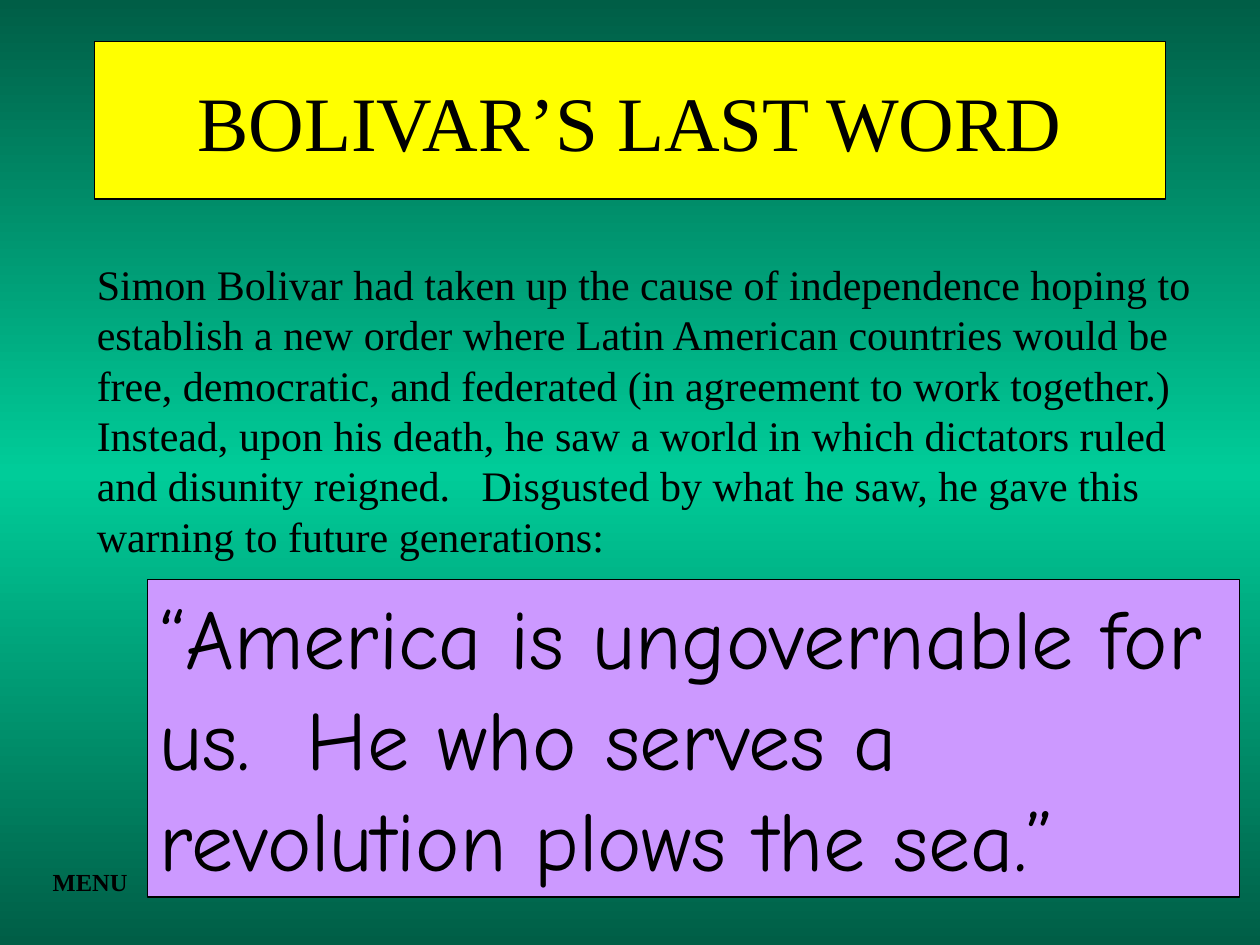
from copy import deepcopy
from dataclasses import dataclass

from pptx import Presentation
from pptx.dml.color import RGBColor
from pptx.enum import shapes, text
from pptx.util import Inches, Pt

SERIF = "Times New Roman"
INK = "000000"


@dataclass
class Box:
    left: float
    top: float
    width: float
    height: float
    fill: str = ""


def tint(code: str) -> RGBColor:
    return RGBColor.from_string(code)


def paint_back(slide, edge: str, core: str) -> None:
    fill = slide.background.fill
    fill.gradient()
    fill.gradient_angle = 90
    first = fill.gradient_stops[0]._gs
    first.addnext(deepcopy(first))
    for stop, place, code in zip(fill.gradient_stops, (0, 0.5, 1), (edge, core, edge)):
        stop.position = place
        stop.color.rgb = tint(code)


def draw_box(slide, box: Box):
    area = [Inches(n) for n in (box.left, box.top, box.width, box.height)]
    if not box.fill:
        return slide.shapes.add_textbox(*area)
    shape = slide.shapes.add_shape(shapes.MSO_SHAPE.RECTANGLE, *area)
    shape.shadow.inherit = False
    shape.fill.solid()
    shape.fill.fore_color.rgb = tint(box.fill)
    shape.line.color.rgb = tint(INK)
    shape.line.width = Pt(0.75)
    return shape


def write(shape, words: str, *, size: int, font: str = SERIF, bold: bool = False,
          align=text.PP_ALIGN.LEFT, anchor=text.MSO_ANCHOR.TOP,
          wrap: bool = True, grow: bool = True) -> None:
    frame = shape.text_frame
    frame.word_wrap = wrap
    frame.vertical_anchor = anchor
    if grow:
        frame.auto_size = text.MSO_AUTO_SIZE.SHAPE_TO_FIT_TEXT
    para = frame.paragraphs[0]
    para.alignment = align
    run = para.add_run()
    run.text = words
    run.font.size = Pt(size)
    run.font.name = font
    run.font.bold = bold
    run.font.color.rgb = tint(INK)


def main() -> None:
    deck = Presentation()
    deck.slide_width, deck.slide_height = Inches(10), Inches(7.5)
    slide = deck.slides.add_slide(deck.slide_layouts[6])
    paint_back(slide, "005E46", "00CC99")

    title = draw_box(slide, Box(0.75, 0.33, 8.5, 1.25, "FFFF00"))
    write(title, "BOLIVAR’S LAST WORD", size=44, grow=False,
          align=text.PP_ALIGN.CENTER, anchor=text.MSO_ANCHOR.MIDDLE)

    story = draw_box(slide, Box(0.67, 2, 9, 2.52))
    write(story, "Simon Bolivar had taken up the cause of independence hoping to "
          "establish a new order where Latin American countries would be free, "
          "democratic, and federated (in agreement to work together.)  Instead, "
          "upon his death, he saw a world in which dictators ruled and disunity "
          "reigned.   Disgusted by what he saw, he gave this warning to future "
          "generations:", size=24)

    quote = draw_box(slide, Box(1.17, 4.6, 8.67, 2.52, "CC99FF"))
    write(quote, "“America is ungovernable for us.  He who serves a revolution "
          "plows the sea.”", size=48, font="Comic Neue")

    menu = draw_box(slide, Box(0.32, 6.83, 0.8, 0.33))
    write(menu, "MENU", size=14, bold=True, wrap=False)

    deck.save("out.pptx")


if __name__ == "__main__":
    main()
